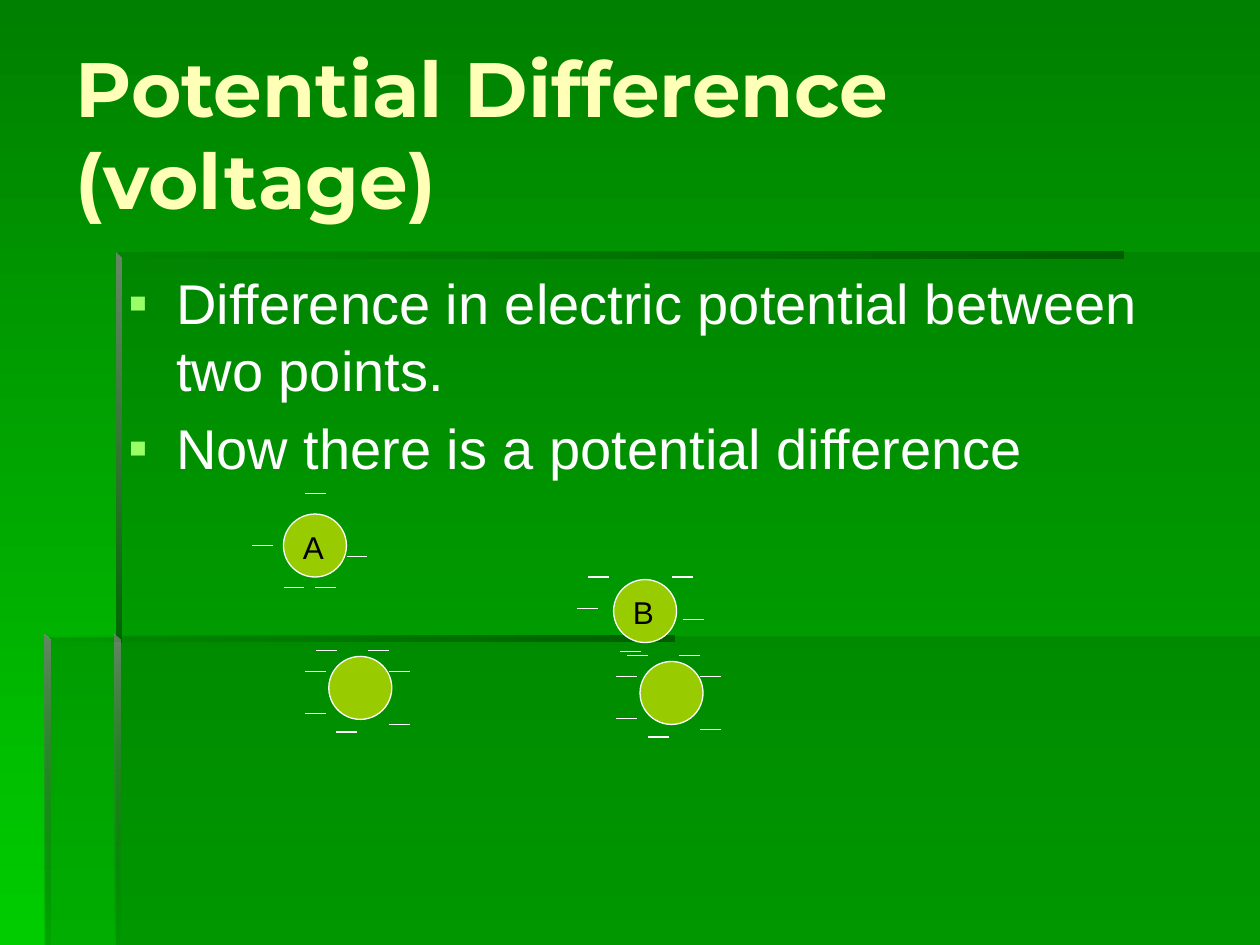
from lxml.etree import SubElement
from pptx import Presentation
from pptx.dml.color import RGBColor
from pptx.enum.shapes import MSO_CONNECTOR, MSO_SHAPE
from pptx.enum.text import MSO_ANCHOR, MSO_AUTO_SIZE, PP_ALIGN
from pptx.oxml.ns import qn
from pptx.util import Inches, Pt

WHITE = RGBColor(0xFF, 0xFF, 0xFF)
BLACK = RGBColor(0x00, 0x00, 0x00)
CREAM = RGBColor(0xFF, 0xFF, 0xB7)
LIME = RGBColor(0x99, 0xCC, 0x00)
BULLET = RGBColor(0x99, 0xFF, 0x66)
BG_TOP = RGBColor(0x00, 0x80, 0x00)
BG_BOTTOM = RGBColor(0x00, 0xCC, 0x00)
SHADE = RGBColor(0x00, 0x66, 0x00)
DEEP = RGBColor(0x00, 0x5E, 0x00)
EDGE = RGBColor(0x66, 0x86, 0x66)

W, H = 10, 7.5
ACROSS, DOWN = 0, 270
BAR = 0.05
DIAMETER = 0.5
DASH = 1 / 3  # dash length, as a share of the diameter

# Left end of each negative charge, in diameters from the circle's top left
CHARGES_A = [(0.34, -0.33), (-0.5, 0.5), (0, 1.17), (0.5, 1.17), (1, 0.67)]
CHARGES_B = [(1.1, 0.63), (0.92, -0.04), (-0.58, 0.46), (0.1, 1.14), (-0.4, -0.04)]
CHARGES_LOWER = [(0.95, 1.08), (0.12, 1.2), (-0.38, 0.91), (-0.38, 0.24),
                 (-0.21, -0.09), (0.62, -0.09), (0.95, 0.24)]


def set_gradient(fill, start, end, angle):
    fill.gradient()
    fill.gradient_angle = angle
    for stop, color in zip(fill.gradient_stops, (start, end)):
        stop.color.rgb = color


def set_opacity(shape, *percents):
    """Give each fill colour of the shape its opacity, in order."""
    colors = shape.element.spPr.iter(qn("a:srgbClr"))
    for color, percent in zip(list(colors), percents):
        if percent < 100:
            SubElement(color, qn("a:alpha"), val=str(percent * 1000))


def add_outline(slide, points):
    pts = [(Inches(x), Inches(y)) for x, y in points]
    builder = slide.shapes.build_freeform(*pts[0], scale=1.0)
    builder.add_line_segments(pts[1:], close=True)
    sp = builder.convert_to_shape()
    sp.shadow.inherit = False
    sp.line.fill.background()
    return sp


def add_panel(slide, points):
    sp = add_outline(slide, points)
    sp.fill.solid()
    sp.fill.fore_color.rgb = SHADE
    set_opacity(sp, 30)


def add_horizontal_bar(slide, x, y, width):
    sp = add_outline(slide, [(x, y), (x, y + BAR), (x + width, y + BAR), (x + width, y)])
    set_gradient(sp.fill, SHADE, DEEP, ACROSS)
    set_opacity(sp, 0, 100)


def add_vertical_bar(slide, x, y, bottom, end_opacity):
    """Bar with a bevelled top end."""
    sp = add_outline(slide, [(x, y), (x, bottom), (x + BAR, bottom), (x + BAR, y + BAR)])
    set_gradient(sp.fill, EDGE, SHADE, DOWN)
    set_opacity(sp, 100, end_opacity)


def add_backdrop(slide):
    set_gradient(slide.background.fill, BG_TOP, BG_BOTTOM, DOWN)
    add_panel(slide, [(0.92, 5.05), (0.92, H), (W, H), (W, 5.05)])
    add_panel(slide, [(0.94, 5.06), (0.36, 5.06), (0.36, H), (W, H), (W, 2), (0.94, 2)])
    add_horizontal_bar(slide, 0.92, 2, 8)
    add_vertical_bar(slide, 0.92, 2, 5.1, 100)
    add_vertical_bar(slide, 0.91, 5.04, H, 0)
    add_horizontal_bar(slide, 0.35, 5.04, 5)
    add_vertical_bar(slide, 0.35, 5.04, H, 10)


def write(p, text, size, color, font="Arial", bold=False):
    p.alignment = PP_ALIGN.LEFT
    r = p.add_run()
    r.text = text
    r.font.size = Pt(size)
    r.font.name = font
    r.font.bold = bold
    r.font.color.rgb = color


def add_text_box(slide, x, y, width, height):
    box = slide.shapes.add_textbox(*map(Inches, (x, y, width, height)))
    box.text_frame.word_wrap = True
    return box.text_frame


def place_title(slide, text, x, y, width, height):
    title = slide.shapes.title
    title.left, title.top, title.width, title.height = map(Inches, (x, y, width, height))
    tf = title.text_frame
    tf.vertical_anchor = MSO_ANCHOR.MIDDLE
    tf.auto_size = MSO_AUTO_SIZE.NONE
    write(tf.paragraphs[0], text, 44, CREAM, font="Montserrat", bold=True)
    slide.shapes.element.append(title.element)  # in front of the backdrop


def set_bullet(p, char, color, indent):
    pPr = p._p.get_or_add_pPr()
    pPr.set("marL", str(Inches(indent)))
    pPr.set("indent", str(-Inches(indent)))
    SubElement(SubElement(pPr, qn("a:buClr")), qn("a:srgbClr"), val=str(color))
    SubElement(pPr, qn("a:buFont"), typeface="Arial")
    SubElement(pPr, qn("a:buChar"), char=char)


def add_bullets(slide, lines, x, y, width, height):
    tf = add_text_box(slide, x, y, width, height)
    for i, line in enumerate(lines):
        p = tf.add_paragraph() if i else tf.paragraphs[0]
        p.space_before = Pt(6.4)
        set_bullet(p, "▪", BULLET, 0.38)
        write(p, line, 32, WHITE)


def add_dash(slide, x, y, length):
    line = slide.shapes.add_connector(
        MSO_CONNECTOR.STRAIGHT, *map(Inches, (x, y, x + length, y)))
    line.line.color.rgb = WHITE
    line.line.width = Pt(0.75)
    SubElement(line.element.spPr, qn("a:effectLst"))


def add_charged_sphere(slide, x, y, d, charges, label=None):
    sp = slide.shapes.add_shape(MSO_SHAPE.OVAL, *map(Inches, (x, y, d, d)))
    sp.shadow.inherit = False
    sp.fill.solid()
    sp.fill.fore_color.rgb = LIME
    sp.line.color.rgb = WHITE
    sp.line.width = Pt(0.75)
    if label:
        tf = add_text_box(slide, x + 0.11 * d, y + 0.12 * d, d, 0.8 * d)
        tf.auto_size = MSO_AUTO_SIZE.SHAPE_TO_FIT_TEXT
        write(tf.paragraphs[0], label, 18, BLACK)
    for dx, dy in charges:
        add_dash(slide, x + dx * d, y + dy * d, DASH * d)


def main():
    prs = Presentation()
    prs.slide_width, prs.slide_height = Inches(W), Inches(H)
    s = prs.slides.add_slide(prs.slide_layouts.get_by_name("Title Only"))
    add_backdrop(s)
    place_title(s, "Potential Difference (voltage)", 0.5, 0.27, 9.17, 1.57)
    add_bullets(s, ["Difference in electric potential between two points.",
                    "Now there is a potential difference"], 0.92, 2.08, 8.76, 4.58)
    add_charged_sphere(s, 2.25, 4.08, DIAMETER, CHARGES_A, "A")
    add_charged_sphere(s, 4.87, 4.6, DIAMETER, CHARGES_B, "B")
    for x, y in [(2.61, 5.21), (5.08, 5.25)]:
        add_charged_sphere(s, x, y, DIAMETER, CHARGES_LOWER)
    prs.save("out.pptx")


if __name__ == "__main__":
    main()
